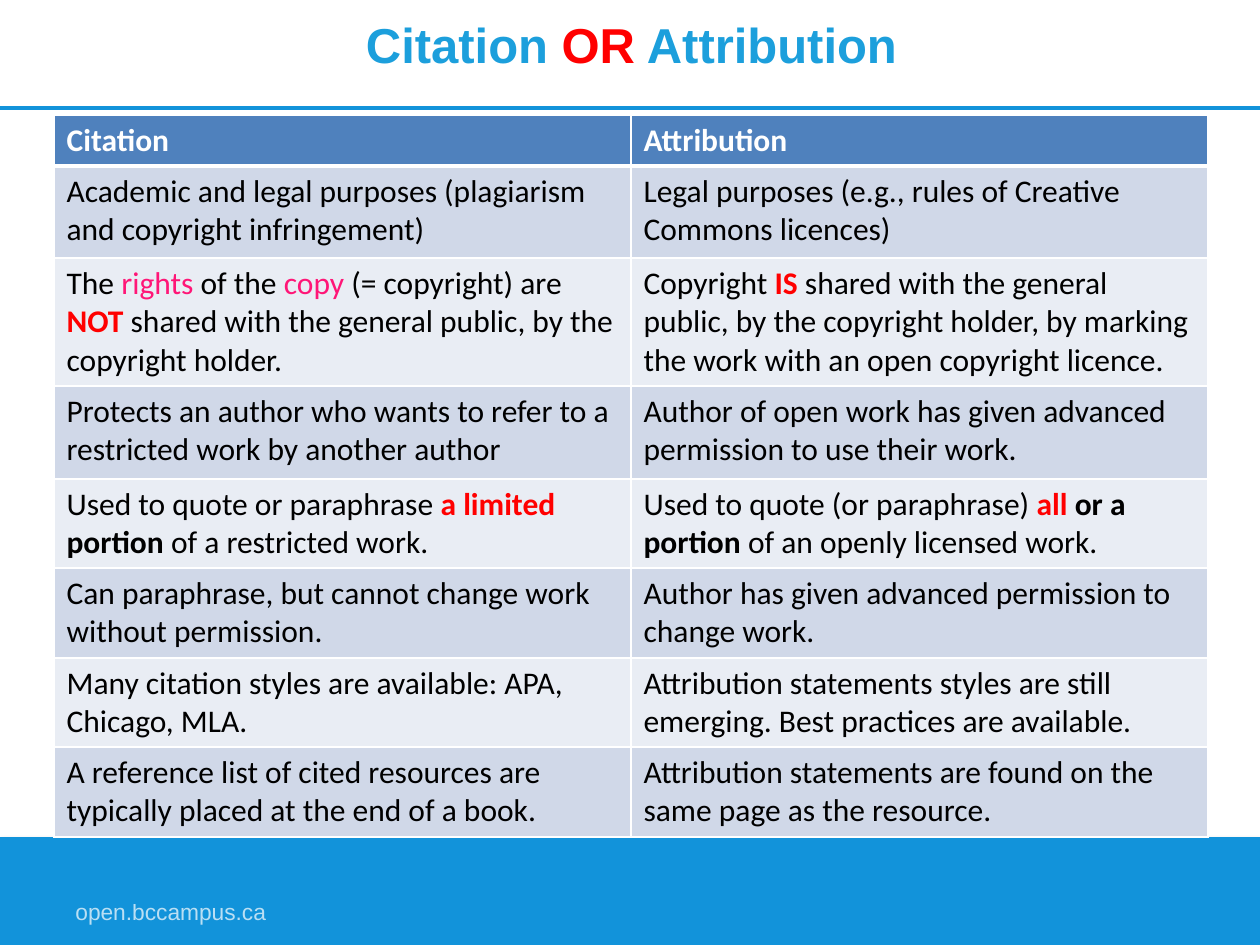
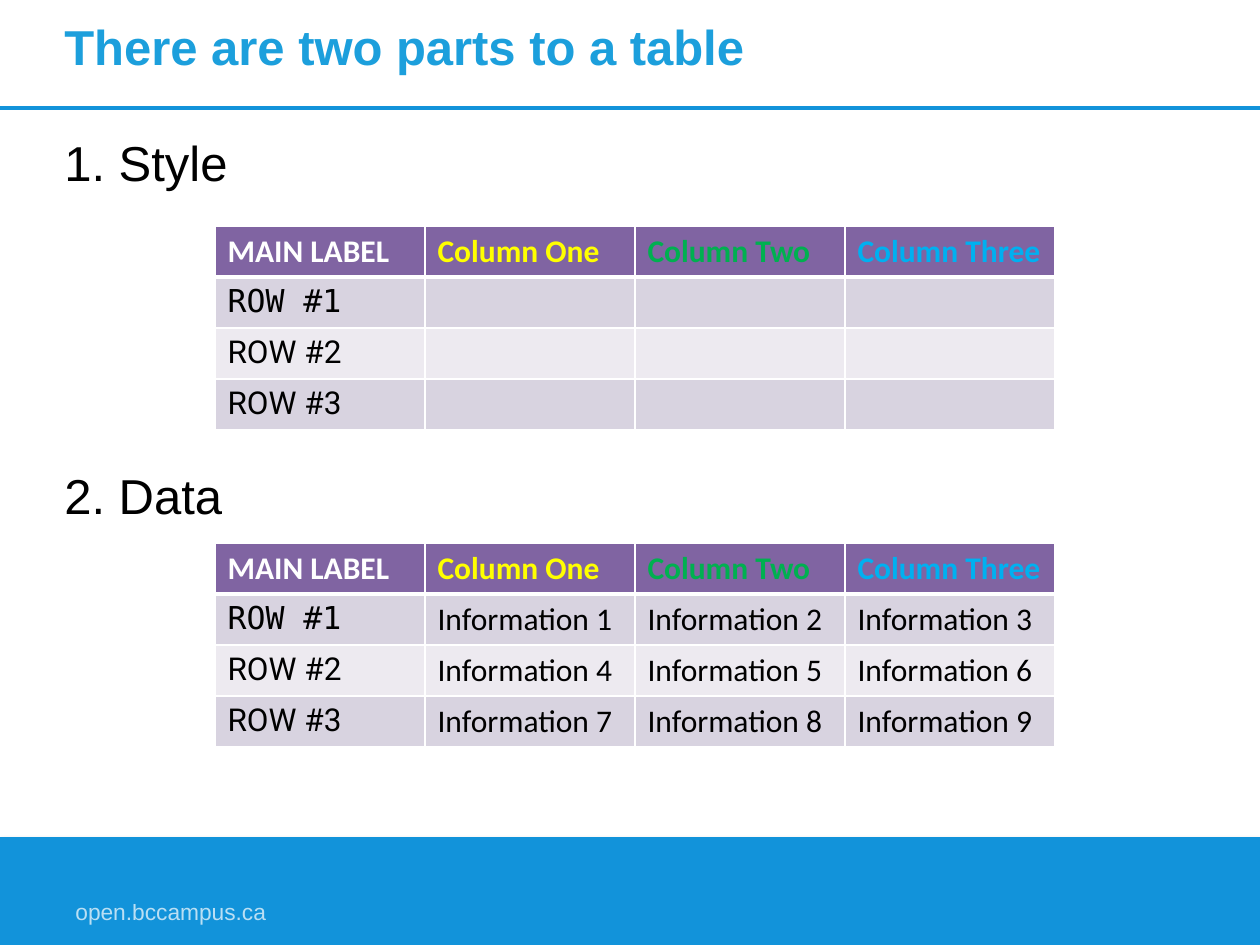
from dataclasses import dataclass
from typing import NamedTuple, Optional, Union

from lxml import etree
from pptx import Presentation
from pptx.dml.color import RGBColor
from pptx.enum.shapes import MSO_CONNECTOR, MSO_SHAPE
from pptx.enum.text import MSO_ANCHOR, PP_ALIGN
from pptx.oxml.ns import qn
from pptx.util import Emu, Pt

STRAIGHT = MSO_CONNECTOR.STRAIGHT
RECTANGLE = MSO_SHAPE.RECTANGLE
LEFT, CENTER = PP_ALIGN.LEFT, PP_ALIGN.CENTER
TOP, MIDDLE = MSO_ANCHOR.TOP, MSO_ANCHOR.MIDDLE

PX_PER_INCH = 126
SLIDE_W, SLIDE_H = 1260, 945
BAND_TOP = 837
RULE_Y = 108


# Theme
@dataclass(frozen=True)
class Theme:
    white: str = "FFFFFF"
    black: str = "000000"
    band: str = "1293DA"
    title: str = "1C9FDC"
    red: str = "FF0000"
    pink: str = "FF1677"
    yellow: str = "FFFF00"
    green: str = "00B050"
    cyan: str = "00B0F0"
    sans: str = "Arial"
    table_font: str = "Calibri"
    mono: str = "DejaVu Sans Mono"
    label_font: str = "Roboto"
    title_size: int = 28
    table_size: int = 18
    footer_size: int = 13
    rule_width: int = 2
    border: int = 1
    header_border: int = 3


THEME = Theme()


class Box(NamedTuple):
    x: int
    y: int
    w: int
    h: int


class Span(NamedTuple):
    text: str
    color: Optional[str] = None
    bold: Optional[bool] = None
    font: Optional[str] = None


Text = Union[str, list[Span]]


@dataclass(frozen=True)
class TableStyle:
    header: str
    odd: str
    even: str


@dataclass(frozen=True)
class TableSpec:
    x: int
    y: int
    col_w: int
    row_heights: list[int]
    cells: list[list[Text]]
    style: TableStyle


BLUE_TABLE = TableStyle("4F81BD", "D0D8E8", "E9EDF4")
PURPLE_TABLE = TableStyle("8064A2", "D8D3E0", "EDEAF0")


# Helpers
def px(n: int) -> Emu:
    return Emu(round(n * 914400 / PX_PER_INCH))


def rgb(color: str) -> RGBColor:
    return RGBColor.from_string(color)


def write(p, text: Text, size: int, font: str, color: str, bold: bool = False) -> None:
    for span in [Span(text)] if isinstance(text, str) else text:
        r = p.add_run()
        r.text = span.text
        r.font.size = Pt(size)
        r.font.name = span.font or font
        r.font.bold = bold if span.bold is None else span.bold
        r.font.color.rgb = rgb(span.color or color)


def add_text(s, box: Box, text: Text, size: int, color: str, bold: bool = False,
             align=LEFT, anchor=TOP, spacing: float = 1.0):
    tf = s.shapes.add_textbox(*map(px, box)).text_frame
    tf.word_wrap = True
    tf.vertical_anchor = anchor
    p = tf.paragraphs[0]
    p.alignment = align
    p.line_spacing = spacing
    write(p, text, size, THEME.sans, color, bold)
    return p


def add_effects(sp):
    return etree.SubElement(sp._element.spPr, qn("a:effectLst"))


def add_color(parent, color: str, alpha: int = 100) -> None:
    clr = etree.SubElement(parent, qn("a:srgbClr"), val=color)
    if alpha < 100:
        etree.SubElement(clr, qn("a:alpha"), val=str(alpha * 1000))


def add_borders(cell, row: int) -> None:
    tcPr = cell._tc.get_or_add_tcPr()
    heavy_side = {0: "lnB", 1: "lnT"}.get(row)
    for side in ("lnL", "lnR", "lnT", "lnB"):
        width = THEME.header_border if side == heavy_side else THEME.border
        ln = etree.SubElement(tcPr, qn(f"a:{side}"), w=str(Pt(width)))
        add_color(etree.SubElement(ln, qn("a:solidFill")), THEME.white)


def add_table(s, spec: TableSpec) -> None:
    n_cols = len(spec.cells[0])
    box = Box(spec.x, spec.y, spec.col_w * n_cols, sum(spec.row_heights))
    table = s.shapes.add_table(len(spec.cells), n_cols, *map(px, box)).table
    table.first_row = table.horz_banding = False
    for col in table.columns:
        col.width = px(spec.col_w)
    for i, (height, texts) in enumerate(zip(spec.row_heights, spec.cells)):
        table.rows[i].height = px(height)
        is_header = i == 0
        band = spec.style.odd if i % 2 else spec.style.even
        for j, text in enumerate(texts):
            cell = table.cell(i, j)
            add_borders(cell, i)
            cell.fill.solid()
            cell.fill.fore_color.rgb = rgb(spec.style.header if is_header else band)
            if text:
                write(cell.text_frame.paragraphs[0], text, THEME.table_size, THEME.table_font,
                      THEME.white if is_header else THEME.black, is_header)


# Shared slide frame: rule, footer band, address
def add_frame(prs):
    s = prs.slides.add_slide(prs.slide_layouts[6])
    s.background.fill.solid()
    s.background.fill.fore_color.rgb = rgb(THEME.white)

    rule = s.shapes.add_connector(STRAIGHT, px(0), px(RULE_Y), px(SLIDE_W), px(RULE_Y))
    rule.line.color.rgb = rgb(THEME.band)
    rule.line.width = Pt(THEME.rule_width)
    add_effects(rule)

    band = s.shapes.add_shape(RECTANGLE, *map(px, Box(0, BAND_TOP, SLIDE_W, SLIDE_H - BAND_TOP)))
    band.fill.solid()
    band.fill.fore_color.rgb = rgb(THEME.band)
    band.line.fill.background()
    shadow = etree.SubElement(add_effects(band), qn("a:outerShdw"), blurRad=str(Pt(3.1)),
                              dist=str(Pt(1.8)), dir="5400000", rotWithShape="0")
    add_color(shadow, THEME.black, 35)

    p = add_text(s, Box(63, 895, 400, 50), "open.bccampus.ca", THEME.footer_size,
                 THEME.white, spacing=0.9)
    fill = p.runs[0].font._element.find(qn("a:solidFill"))
    fill.clear()
    add_color(fill, THEME.white, 71)
    return s


def add_title(s, x: int, y: int, text: Text, align=LEFT) -> None:
    add_text(s, Box(x, y, 1109, 77), text, THEME.title_size, THEME.title, True,
             align, MIDDLE, 0.7)


# Slide 1: citation compared with attribution
def build_comparison(prs) -> None:
    s = add_frame(prs)
    add_title(s, 77, 13, [Span("Citation "), Span("OR", THEME.red), Span(" Attribution")], CENTER)
    cells: list[list[Text]] = [
        ["Citation", "Attribution"],
        ["Academic and legal purposes (plagiarism and copyright infringement)",
         "Legal purposes (e.g., rules of Creative Commons licences)"],
        [[Span("The "), Span("rights", THEME.pink), Span(" of the "), Span("copy", THEME.pink),
          Span(" (= copyright) are "), Span("NOT", THEME.red, True),
          Span(" shared with the general public, by the copyright holder.")],
         [Span("Copyright "), Span("IS", THEME.red, True),
          Span(" shared with the general public, by the copyright holder, "
               "by marking the work with an open copyright licence.")]],
        ["Protects an author who wants to refer to a restricted work by another author",
         "Author of open work has given advanced permission to use their work."],
        [[Span("Used to quote or paraphrase "), Span("a limited ", THEME.red, True),
          Span("portion ", bold=True), Span("of a restricted work.")],
         [Span("Used to quote (or paraphrase) "), Span("all ", THEME.red, True),
          Span("or a portion ", bold=True), Span("of an openly licensed work.")]],
        ["Can paraphrase, but cannot change work without permission.",
         "Author has given advanced permission to change work."],
        ["Many citation styles are available: APA, Chicago, MLA.",
         "Attribution statements styles are still emerging. Best practices are available."],
        ["A reference list of cited resources are typically placed at the end of a book.",
         "Attribution statements are found on the same page as the resource."],
    ]
    heights = [51, 92, 128, 93, 89, 90, 89, 90]
    add_table(s, TableSpec(54, 115, 577, heights, cells, BLUE_TABLE))


# Slide 2: table style and table data
def build_table_parts(prs) -> None:
    s = add_frame(prs)
    add_title(s, 52, 15, "There are two parts to a table")
    header: list[Text] = ["MAIN LABEL", [Span("Column One", THEME.yellow)],
                          [Span("Column Two", THEME.green)], [Span("Column Three", THEME.cyan)]]
    label_fonts = [THEME.mono, THEME.label_font, THEME.label_font]
    labels = [[Span(f"ROW #{n}", font=font)] for n, font in enumerate(label_fonts, 1)]
    blank = [[""] * 3 for _ in labels]
    data = [[f"Information {3 * i + j}" for j in (1, 2, 3)] for i in range(len(labels))]

    for heading, heading_y, table_y, values in (("1. Style", 126, 226, blank),
                                                ("2. Data", 459, 543, data)):
        add_text(s, Box(52, heading_y, 445, 72), heading, THEME.title_size, THEME.black)
        cells = [header] + [[label, *row] for label, row in zip(labels, values)]
        add_table(s, TableSpec(215, table_y, 210, [51] * len(cells), cells, PURPLE_TABLE))


def main() -> None:
    prs = Presentation()
    prs.slide_width, prs.slide_height = px(SLIDE_W), px(SLIDE_H)
    build_comparison(prs)
    build_table_parts(prs)
    prs.save("out.pptx")


if __name__ == "__main__":
    main()
